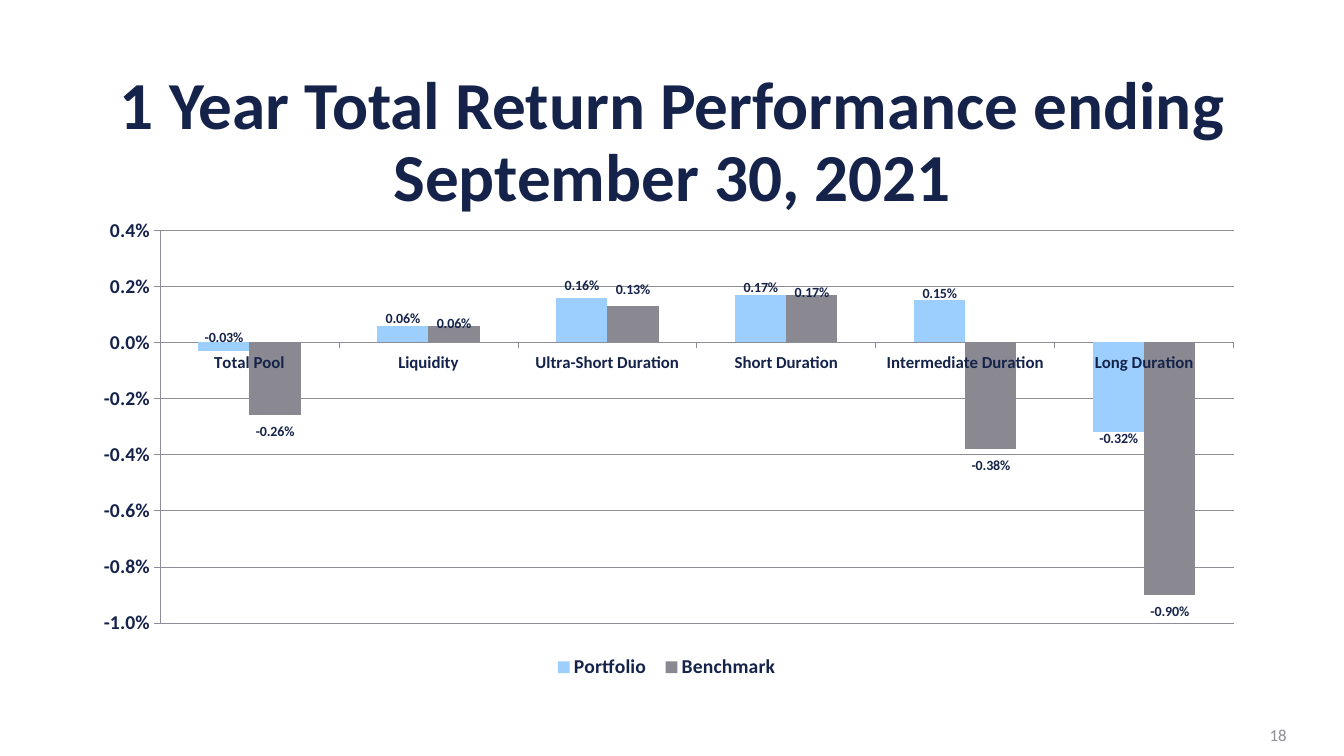
from dataclasses import dataclass

from lxml import etree
from pptx import Presentation
from pptx.chart import data as chart_data
from pptx.dml import color
from pptx.enum import chart as charts, text
from pptx.oxml import ns
from pptx.util import Inches, Pt


@dataclass(frozen=True)
class Theme:
    font: str = "Calibri"
    navy: str = "15234A"
    grey: str = "8C8D96"
    portfolio: str = "9CCFFE"
    benchmark: str = "8A8992"
    title_size: int = 48
    chart_size: int = 18
    axis_size: int = 14
    category_size: int = 12
    label_size: int = 10
    page_size: int = 12


THEME = Theme()
PERCENT = "0.00%"
LABEL_EXTENSION = "{CE6537A1-D6FC-4f65-9D91-7224C49458BB}"
CHART_2012 = "http://schemas.microsoft.com/office/drawing/2012/chart"
CATEGORIES = ["Total Pool", "Liquidity", "Ultra-Short Duration",
              "Short Duration", "Intermediate Duration", "Long Duration"]
RETURNS = {
    "Portfolio": (THEME.portfolio,
                  [-0.0003, 0.0006, 0.0016, 0.0017, 0.0015, -0.0032],
                  [-0.05, 0.01, 0, 0.01, 0.01, -0.01]),
    "Benchmark": (THEME.benchmark,
                  [-0.0026, 0.0006, 0.0013, 0.0017, -0.0038, -0.009],
                  [0.01, 0.02, -0.01, 0.02, 0.01, 0.01]),
}


def apply(target, values):
    for key, value in values.items():
        setattr(target, key, value)


def style_font(font, size, ink=THEME.navy, bold=True):
    apply(font, {"name": THEME.font, "size": Pt(size), "bold": bold})
    font.color.rgb = color.RGBColor.from_string(ink)


def manual_layout(**settings):
    layout = etree.Element(ns.qn("c:layout"))
    manual = etree.SubElement(layout, ns.qn("c:manualLayout"))
    for tag, value in settings.items():
        etree.SubElement(manual, ns.qn(f"c:{tag}")).set("val", str(value))
    return layout


def place(node, index, **settings):
    for layout in node.xpath("c:layout"):
        node.remove(layout)
    node.insert(index, manual_layout(xMode="edge", yMode="edge", **settings))


def hide_leader_lines(labels):
    extensions = etree.SubElement(labels, ns.qn("c:extLst"))
    extension = etree.SubElement(extensions, ns.qn("c:ext"),
                                 uri=LABEL_EXTENSION, nsmap={"c15": CHART_2012})
    etree.SubElement(extension, f"{{{CHART_2012}}}showLeaderLines", val="0")


def add_words(slide, box, words, align, size, ink, bold, spacing):
    frame = slide.shapes.add_textbox(*map(Inches, box)).text_frame
    apply(frame, {"word_wrap": True, "vertical_anchor": text.MSO_ANCHOR.MIDDLE})
    paragraph = frame.paragraphs[0]
    apply(paragraph, {"text": words, "alignment": align, "line_spacing": spacing})
    style_font(paragraph.runs[0].font, size, ink, bold)


def add_title(slide, box):
    add_words(slide, box, "1 Year Total Return Performance ending September 30, 2021",
              text.PP_ALIGN.CENTER, THEME.title_size, THEME.navy, True, 0.9)


def add_page_number(slide, box):
    add_words(slide, box, "18", text.PP_ALIGN.RIGHT, THEME.page_size,
              THEME.grey, False, 1.0)


def style_axes(chart):
    returns, sectors = chart.value_axis, chart.category_axis
    apply(returns, {"minimum_scale": -0.01, "maximum_scale": 0.004,
                    "major_unit": 0.002, "has_major_gridlines": True})
    apply(returns.tick_labels, {"number_format": "0.0%",
                                "number_format_is_linked": False})
    style_font(returns.tick_labels.font, THEME.axis_size)
    style_font(sectors.tick_labels.font, THEME.category_size)
    for axis in (returns, sectors):
        apply(axis, {"major_tick_mark": charts.XL_TICK_MARK.OUTSIDE,
                     "minor_tick_mark": charts.XL_TICK_MARK.NONE})
    for line in (returns.format.line, sectors.format.line,
                 returns.major_gridlines.format.line):
        line.width = Pt(0.5)
        line.color.rgb = color.RGBColor.from_string(THEME.grey)


def style_series(series, fill, nudges):
    series.invert_if_negative = False
    series.format.fill.solid()
    series.format.fill.fore_color.rgb = color.RGBColor.from_string(fill)
    labels = series.data_labels
    apply(labels, {"show_value": True, "number_format": PERCENT,
                   "number_format_is_linked": False,
                   "position": charts.XL_LABEL_POSITION.OUTSIDE_END})
    style_font(labels.font, THEME.label_size)
    for index, nudge in enumerate(nudges):
        if nudge:
            label = series.points[index].data_label
            label.position = charts.XL_LABEL_POSITION.OUTSIDE_END
            style_font(label.font, THEME.label_size)
            node = series._element.xpath(f'.//c:dLbl[c:idx/@val="{index}"]')[0]
            number = etree.Element(ns.qn("c:numFmt"),
                                   formatCode=PERCENT, sourceLinked="0")
            node.insert(1, manual_layout(x=0, y=nudge))
            node.insert(2, number)
    hide_leader_lines(series._element.xpath("c:dLbls")[0])


def add_returns_chart(slide, box):
    returns = chart_data.CategoryChartData(number_format=PERCENT)
    returns.categories = CATEGORIES
    for name, (_, values, _) in RETURNS.items():
        returns.add_series(name, values)
    chart = slide.shapes.add_chart(charts.XL_CHART_TYPE.COLUMN_CLUSTERED,
                                   *map(Inches, box), returns).chart
    apply(chart, {"has_title": False, "has_legend": True})
    style_font(chart.font, THEME.chart_size, bold=False)
    apply(chart.legend, {"position": charts.XL_LEGEND_POSITION.BOTTOM,
                         "include_in_layout": False})
    style_font(chart.legend.font, THEME.axis_size)
    style_axes(chart)
    plot = chart.plots[0]
    apply(plot, {"gap_width": 150, "overlap": 0, "vary_by_categories": False})
    for series in plot.series:
        fill, _, nudges = RETURNS[series.name]
        style_series(series, fill, nudges)
    area, legend = chart._chartSpace.xpath("c:chart/c:plotArea | c:chart/c:legend")
    place(area, 0, x=0.058, y=0.038, w=0.926, h=0.802)
    area.xpath("c:layout/c:manualLayout")[0].insert(
        0, etree.Element(ns.qn("c:layoutTarget"), val="inner"))
    place(legend, 1, x=0.39, y=0.9, w=0.21, h=0.06)


def main():
    deck = Presentation()
    apply(deck, {"slide_width": Inches(13.33), "slide_height": Inches(7.5)})
    slide = deck.slides.add_slide(deck.slide_layouts[6])
    add_title(slide, (0.92, 0.75, 11.5, 1.35))
    add_returns_chart(slide, (0.92, 2.1, 11.5, 4.86))
    add_page_number(slide, (9.86, 7.09, 3, 0.4))
    deck.save("out.pptx")


if __name__ == "__main__":
    main()
